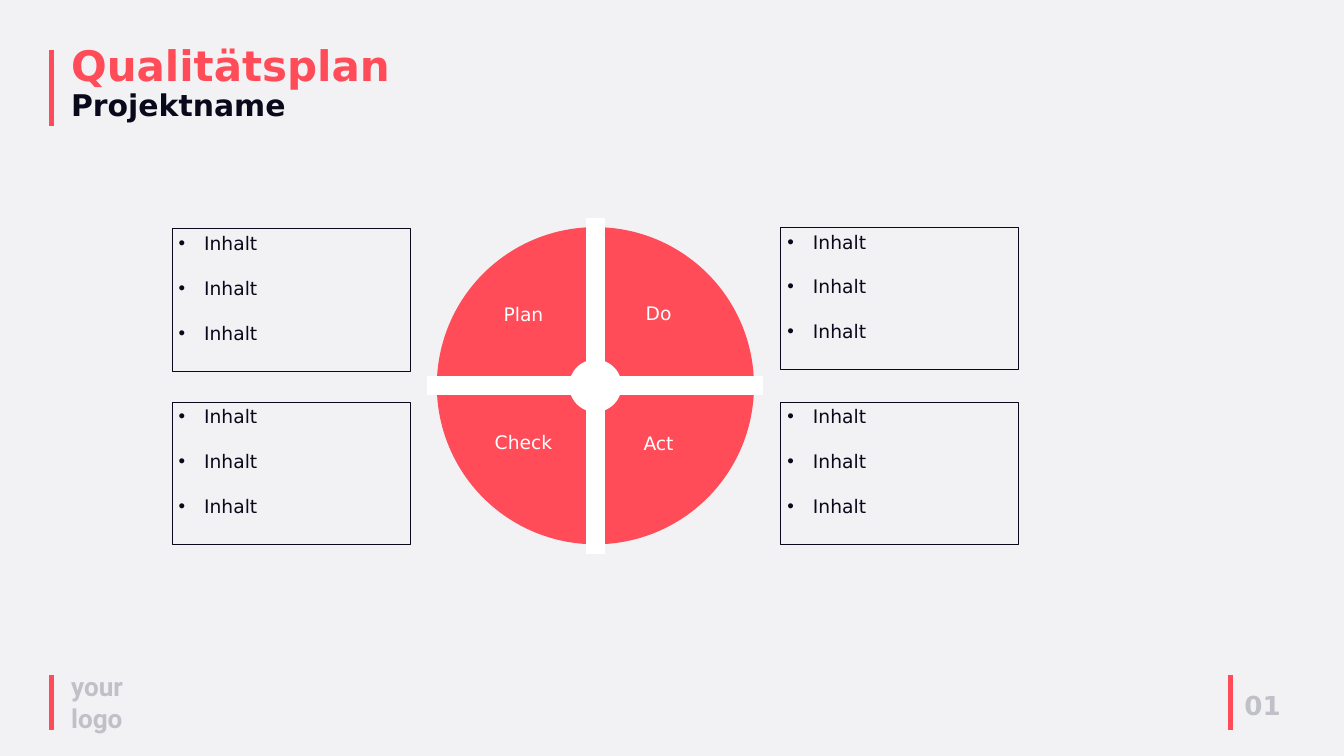
from typing import NamedTuple

from lxml import etree
from pptx import Presentation
from pptx.dml.color import RGBColor
from pptx.enum.shapes import MSO_CONNECTOR, MSO_SHAPE
from pptx.enum.text import MSO_ANCHOR, PP_ALIGN
from pptx.oxml.ns import qn
from pptx.util import Inches, Pt

STRAIGHT = MSO_CONNECTOR.STRAIGHT
OVAL, RECTANGLE = MSO_SHAPE.OVAL, MSO_SHAPE.RECTANGLE
LEFT, CENTER = PP_ALIGN.LEFT, PP_ALIGN.CENTER
TOP = MSO_ANCHOR.TOP

COLORS = {
    "background": "F2F2F5",
    "accent": "FF4C58",
    "dark": "0A091B",
    "muted": "C0C0C8",
    "white": "FFFFFF",
}
FONT = "DejaVu Sans"
LOGO_FONT = "Roboto"

CENTER_X, CENTER_Y = 8.86, 5.74
WHEEL_RADIUS, HUB_RADIUS = 2.36, 0.39
BOX_WIDTH, BOX_HEIGHT = 3.54, 2.12
LABEL_WIDTH, LABEL_HEIGHT = 1.08, 0.44
BULLET_INDENT = 0.38


class Phase(NamedTuple):
    name: str
    label_left: float
    label_top: float
    box_left: float
    box_top: float
    items: tuple = ("Inhalt",) * 3


class Line(NamedTuple):
    x1: float
    y1: float
    x2: float
    y2: float
    color: str
    width: float
    cap: str = "flat"


class Caption(NamedTuple):
    left: float
    top: float
    width: float
    height: float
    runs: tuple  # (text, size, color), one line each
    font: str = FONT
    bold: bool = True
    align: PP_ALIGN = LEFT
    line_spacing: float = 1.0


PHASES = (
    Phase("Plan", 7.25, 4.46, 2.56, 3.4),
    Phase("Do", 9.26, 4.44, 11.62, 3.38),
    Phase("Check", 7.25, 6.36, 2.56, 5.98),
    Phase("Act", 9.26, 6.38, 11.62, 5.98),
)

MARKERS = tuple(
    Line(x, top, x, bottom, "accent", 5)
    for x, top, bottom in ((0.77, 0.75, 1.88), (0.77, 10.05, 10.86), (18.31, 10.05, 10.86))
)

SPOKES = tuple(
    Line(
        CENTER_X + dx * HUB_RADIUS, CENTER_Y + dy * HUB_RADIUS,
        CENTER_X + dx * WHEEL_RADIUS, CENTER_Y + dy * WHEEL_RADIUS,
        "white", 20, "sq",
    )
    for dx, dy in ((1, 0), (-1, 0), (0, -1), (0, 1))
)

CAPTIONS = (
    Caption(0.96, 9.93, 1.19, 1.04, (("your logo", 28, "muted"),), font=LOGO_FONT),
    Caption(0.96, 0.62, 5.96, 1.27,
            (("Qualitätsplan", 45, "accent"), ("Projektname", 32, "dark")),
            line_spacing=0.9),
    Caption(18.42, 10.21, 1.9, 0.57, (("01", 28, "muted"),)),
)


def rgb(color: str) -> RGBColor:
    return RGBColor.from_string(COLORS[color])


def add_run(paragraph, text: str, size: float, color: str, font: str = FONT, bold: bool = False) -> None:
    run = paragraph.add_run()
    run.text = text
    run.font.color.rgb = rgb(color)
    for attribute, value in {"size": Pt(size), "name": font, "bold": bold}.items():
        setattr(run.font, attribute, value)


def add_caption(slide, caption: Caption) -> None:
    box = slide.shapes.add_textbox(*map(Inches, caption[:4]))
    box.text_frame.word_wrap = True
    paragraph = box.text_frame.paragraphs[0]
    paragraph.alignment = caption.align
    paragraph.line_spacing = caption.line_spacing
    for index, (text, size, color) in enumerate(caption.runs):
        if index:
            paragraph.add_line_break()
        add_run(paragraph, text, size, color, caption.font, caption.bold)


def add_line(slide, line: Line) -> None:
    connector = slide.shapes.add_connector(STRAIGHT, *map(Inches, line[:4]))
    connector.line.color.rgb = rgb(line.color)
    connector.line.width = Pt(line.width)
    properties = connector.line._get_or_add_ln()
    properties.set("cap", line.cap)
    etree.SubElement(properties.getparent(), qn("a:effectLst"))


def add_disc(slide, radius: float, color: str) -> None:
    """Draw a circle around the centre of the wheel."""
    disc = slide.shapes.add_shape(
        OVAL, Inches(CENTER_X - radius), Inches(CENTER_Y - radius),
        Inches(2 * radius), Inches(2 * radius))
    disc.shadow.inherit = False
    disc.fill.solid()
    disc.fill.fore_color.rgb = rgb(color)
    disc.line.fill.background()


def add_bullet(paragraph) -> None:
    properties = paragraph._p.get_or_add_pPr()
    properties.set("marL", str(Inches(BULLET_INDENT)))
    properties.set("indent", str(-Inches(BULLET_INDENT)))
    etree.SubElement(properties, qn("a:buFont"), typeface="Arial")
    etree.SubElement(properties, qn("a:buChar"), char="•")


def add_content_box(slide, phase: Phase) -> None:
    box = slide.shapes.add_shape(
        RECTANGLE, Inches(phase.box_left), Inches(phase.box_top),
        Inches(BOX_WIDTH), Inches(BOX_HEIGHT))
    box.shadow.inherit = False
    box.fill.background()
    box.line.color.rgb = rgb("dark")
    box.line.width = Pt(0.75)
    frame = box.text_frame
    frame.word_wrap = True
    frame.vertical_anchor = TOP
    for index, item in enumerate(phase.items):
        paragraph = frame.add_paragraph() if index else frame.paragraphs[0]
        paragraph.alignment = LEFT
        if index:
            paragraph.space_before = Pt(24)
        add_bullet(paragraph)
        add_run(paragraph, item, 20, "dark")


def main() -> None:
    presentation = Presentation()
    presentation.slide_width = Inches(20)
    presentation.slide_height = Inches(11.25)
    slide = presentation.slides.add_slide(presentation.slide_layouts[6])
    slide.background.fill.solid()
    slide.background.fill.fore_color.rgb = rgb("background")

    for marker in MARKERS:
        add_line(slide, marker)
    for caption in CAPTIONS:
        add_caption(slide, caption)

    add_disc(slide, WHEEL_RADIUS, "accent")
    add_disc(slide, HUB_RADIUS, "white")
    for spoke in SPOKES:
        add_line(slide, spoke)
    for phase in PHASES:
        add_caption(slide, Caption(
            phase.label_left, phase.label_top, LABEL_WIDTH, LABEL_HEIGHT,
            ((phase.name, 20, "white"),), bold=False, align=CENTER))
    for phase in PHASES:
        add_content_box(slide, phase)

    presentation.save("out.pptx")


if __name__ == "__main__":
    main()
